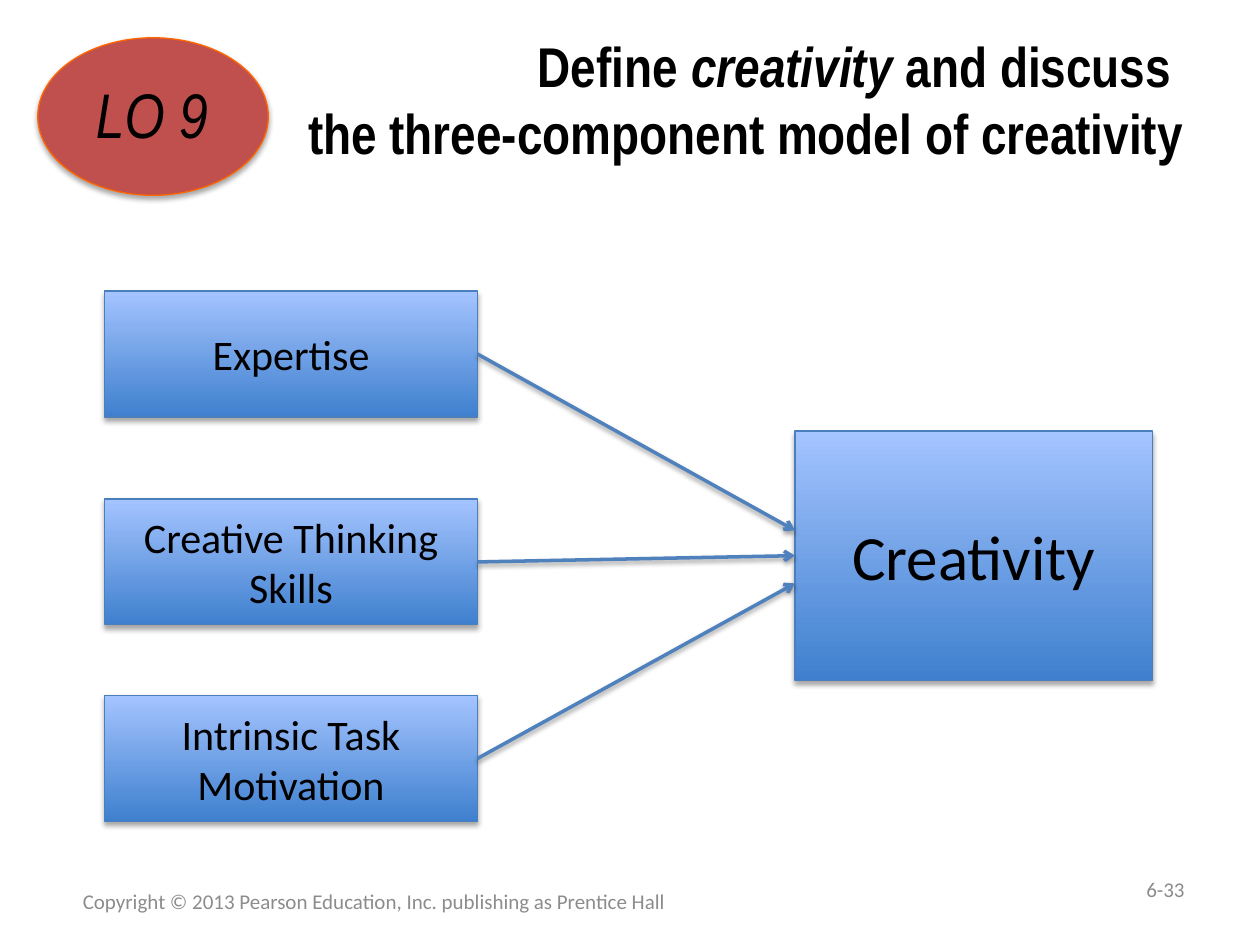
from dataclasses import dataclass

from lxml.etree import SubElement
from pptx import Presentation
from pptx.dml.color import RGBColor
from pptx.enum.shapes import MSO_CONNECTOR as Connector, MSO_SHAPE as Shape
from pptx.enum.text import MSO_ANCHOR as Anchor, MSO_AUTO_SIZE as AutoSize, PP_ALIGN as Align
from pptx.oxml.ns import qn
from pptx.util import Inches, Pt

BLACK, GREY = "000000", "8C8C8C"


@dataclass
class Box:
    text: str
    left: float
    top: float
    width: float
    height: float
    size: int = 24


@dataclass
class Arrow:
    start_y: float
    end_y: float


def rgb(value: str) -> RGBColor:
    return RGBColor.from_string(value)


def style(paragraph, font: str, size: int, color: str, align: Align) -> None:
    paragraph.alignment = align
    paragraph.font.name = font
    paragraph.font.size = Pt(size)
    paragraph.font.color.rgb = rgb(color)


def add_shadow(properties, opacity: int, blur: float = 3.1, distance: float = 1.8) -> None:
    """Drop a soft black shadow straight down."""
    effects = properties.find(qn("a:effectLst"))
    if effects is None:
        effects = SubElement(properties, qn("a:effectLst"))
    shadow = SubElement(effects, qn("a:outerShdw"), blurRad=str(Pt(blur)),
                        dist=str(Pt(distance)), dir="5400000", rotWithShape="0")
    color = SubElement(shadow, qn("a:srgbClr"), val=BLACK)
    SubElement(color, qn("a:alpha"), val=str(opacity * 1000))


def add_label(slide, label: Box, font: str, color: str, align: Align):
    area = slide.shapes.add_textbox(Inches(label.left), Inches(label.top),
                                    Inches(label.width), Inches(label.height))
    frame = area.text_frame
    frame.word_wrap = True
    frame.vertical_anchor = Anchor.MIDDLE
    paragraph = frame.paragraphs[0]
    run = paragraph.add_run()
    run.text = label.text
    style(paragraph, font, label.size, color, align)
    return paragraph


def add_outlined(slide, kind: Shape, box: Box, outline: str):
    shape = slide.shapes.add_shape(kind, Inches(box.left), Inches(box.top),
                                   Inches(box.width), Inches(box.height))
    shape.line.color.rgb = rgb(outline)
    shape.line.width = Pt(0.75)
    shape.shadow.inherit = False
    add_shadow(shape._element.spPr, 35)
    return shape


def add_component(slide, box: Box) -> None:
    shape = add_outlined(slide, Shape.RECTANGLE, box, "4B7EBC")
    shape.fill.gradient()
    shape.fill.gradient_angle = 90
    for stop, color in zip(shape.fill.gradient_stops, ("3F80CE", "A4C4FF")):
        stop.position = 0 if color == "3F80CE" else 1
        stop.color.rgb = rgb(color)
    frame = shape.text_frame
    frame.text = box.text
    frame.vertical_anchor = Anchor.MIDDLE
    style(frame.paragraphs[0], "Calibri", box.size, BLACK, Align.CENTER)


def add_arrow(slide, arrow: Arrow, start_x: float, end_x: float) -> None:
    line = slide.shapes.add_connector(Connector.STRAIGHT, Inches(start_x), Inches(arrow.start_y),
                                      Inches(end_x), Inches(arrow.end_y))
    line.line.color.rgb = rgb("4F81BD")
    line.line.width = Pt(2)
    SubElement(line.line._get_or_add_ln(), qn("a:tailEnd"), type="arrow")
    add_shadow(line._element.spPr, 38, distance=1.6)


def add_title(slide) -> None:
    title = slide.shapes.title
    title.left, title.top = Inches(0.5), Inches(0)
    title.width, title.height = Inches(9), Inches(1.57)
    frame = title.text_frame
    frame.auto_size = AutoSize.NONE
    frame.vertical_anchor = Anchor.MIDDLE
    heading = frame.paragraphs[0]
    for text, italic in (("Define ", False), ("creativity ", True), ("and discuss ", False)):
        run = heading.add_run()
        run.text = text
        run.font.italic = italic
    heading.add_line_break()
    heading.add_run().text = "the three-component model of creativity"
    style(heading, "Arial Narrow", 32, BLACK, Align.RIGHT)
    heading.font.bold = True


def main() -> None:
    deck = Presentation()
    deck.slide_width, deck.slide_height = Inches(10), Inches(7.5)
    slide = deck.slides.add_slide(deck.slide_layouts[5])
    add_title(slide)

    # Footer
    notice = "Copyright © 2013 Pearson Education, Inc. publishing as Prentice Hall"
    add_label(slide, Box(notice, 0.5, 6.95, 4.94, 0.4, 12), "Calibri", GREY, Align.CENTER)
    add_label(slide, Box("6-33", 8.83, 6.86, 0.67, 0.4, 12), "Calibri", GREY, Align.RIGHT)

    # Learning objective badge
    badge = add_outlined(slide, Shape.OVAL, Box("", 0.3, 0.3, 1.83, 1.25), "FF6600")
    badge.fill.solid()
    badge.fill.fore_color.rgb = rgb("C0504D")
    objective = add_label(slide, Box("LO 9", 0.58, 0.55, 1.25, 0.7, 36),
                          "Arial Narrow", BLACK, Align.CENTER)
    objective.font.italic = True
    add_shadow(objective.runs[0]._r.get_or_add_rPr(), 43)

    # Three components and their outcome
    left, width, height = 0.83, 2.96, 1
    components = (("Expertise", 2.31), ("Creative Thinking Skills", 3.96),
                  ("Intrinsic Task Motivation", 5.52))
    outcome = Box("Creativity", 6.31, 3.42, 2.84, 1.98, 36)
    for text, top in components:
        add_component(slide, Box(text, left, top, width, height))
    add_component(slide, outcome)

    # Arrows from each component to the outcome
    for (_, top), end_y in zip(components, (4.21, 4.41, 4.63)):
        add_arrow(slide, Arrow(top + height / 2, end_y), left + width, outcome.left)

    deck.save("out.pptx")


if __name__ == "__main__":
    main()
